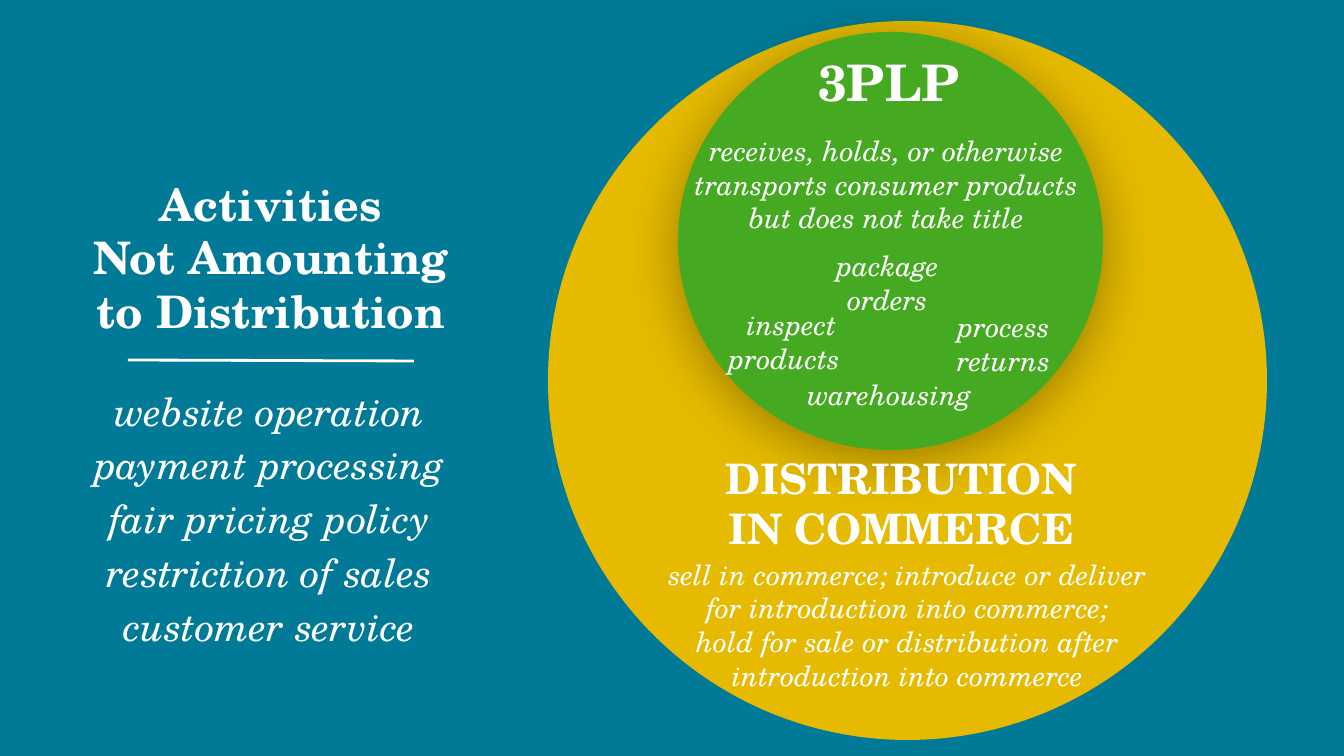
from dataclasses import dataclass

import pptx
import pptx.dml.color
import pptx.enum.shapes
import pptx.enum.text
import pptx.oxml
import pptx.oxml.ns
import pptx.util
from lxml import etree

TEAL = pptx.dml.color.RGBColor(0x00, 0x7A, 0x96)
GOLD = pptx.dml.color.RGBColor(0xE5, 0xBA, 0x00)
GREEN = pptx.dml.color.RGBColor(0x45, 0xAA, 0x21)
WHITE = pptx.dml.color.RGBColor(0xFF, 0xFF, 0xFF)

FONT = "TeX Gyre Schola"
EMU_PER_PX = 914400 / 100.8
TITLE_ONLY = 5
INSET = 3


@dataclass(frozen=True)
class Box:
    left: int
    top: int
    width: int
    height: int


@dataclass(frozen=True)
class Label:
    text: str
    box: Box
    size: int = 20
    heading: bool = False  # headings are bold, descriptions italic
    wrap: bool = True
    gap: float = 0  # points between paragraphs
    last_indent: int = 0  # right indent of the last paragraph


@dataclass(frozen=True)
class Circle:
    box: Box
    colour: pptx.dml.color.RGBColor
    raised: bool = False


CIRCLES = [
    Circle(Box(548, 21, 719, 719), GOLD),
    Circle(Box(678, 32, 425, 418), GREEN, raised=True),
]

TITLE = Label("Activities\nNot Amounting\nto Distribution",
              Box(89, 173, 364, 168), 32, heading=True, wrap=False)

LABELS = [
    # 3PLP
    Label("3PLP", Box(800, 48, 178, 67), 36, heading=True),
    Label("receives, holds, or otherwise transports consumer products "
          "but does not take title", Box(689, 130, 395, 108)),
    Label("package\norders", Box(774, 245, 227, 74)),
    Label("inspect\nproducts", Box(678, 304, 227, 74), last_indent=15),
    Label("process\nreturns", Box(890, 306, 227, 74)),
    Label("warehousing", Box(776, 375, 227, 39)),
    # Distribution in commerce
    Label("DISTRIBUTION IN COMMERCE", Box(708, 449, 387, 108), 30, heading=True),
    Label("sell in commerce; introduce or deliver\n"
          "for introduction into commerce;\n"
          "hold for sale or distribution after introduction into commerce",
          Box(653, 554, 509, 141)),
    # Activities outside distribution
    Label("website operation\npayment processing\nfair pricing policy\n"
          "restriction of sales\ncustomer service",
          Box(79, 381, 381, 274), 28, gap=4.8),
]


def px(length: int) -> pptx.util.Emu:
    return pptx.util.Emu(round(length * EMU_PER_PX))


def edges(box: Box) -> tuple:
    return px(box.left), px(box.top), px(box.width), px(box.height)


def add_soft_shadow(shape) -> None:
    effects = pptx.oxml.parse_xml(
        f'<a:effectLst {pptx.oxml.ns.nsdecls("a")}>'
        f'<a:outerShdw blurRad="{pptx.util.Pt(38)}" dist="{pptx.util.Pt(6.7)}" '
        'dir="5400000" rotWithShape="0"><a:srgbClr val="000000">'
        '<a:alpha val="33000"/></a:srgbClr></a:outerShdw></a:effectLst>')
    properties = shape.element.spPr
    properties.remove(properties.find(pptx.oxml.ns.qn("a:effectLst")))
    properties.append(effects)


def draw_circle(slide, circle: Circle) -> None:
    shape = slide.shapes.add_shape(
        pptx.enum.shapes.MSO_SHAPE.OVAL, *edges(circle.box))
    shape.fill.solid()
    shape.fill.fore_color.rgb = circle.colour
    shape.line.fill.background()
    shape.shadow.inherit = False
    if circle.raised:
        add_soft_shadow(shape)


def write_label(shape, label: Label) -> None:
    shape.left, shape.top, shape.width, shape.height = edges(label.box)
    frame = shape.text_frame
    frame.text = label.text
    frame.word_wrap = label.wrap
    frame.auto_size = pptx.enum.text.MSO_AUTO_SIZE.SHAPE_TO_FIT_TEXT
    frame.vertical_anchor = pptx.enum.text.MSO_ANCHOR.MIDDLE
    frame.margin_left = frame.margin_right = px(INSET)
    frame.margin_top = frame.margin_bottom = px(INSET)
    for index, paragraph in enumerate(frame.paragraphs):
        paragraph.alignment = pptx.enum.text.PP_ALIGN.CENTER
        if index and label.gap:
            paragraph.space_before = pptx.util.Pt(label.gap)
        for run in paragraph.runs:
            run.font.name = FONT
            run.font.size = pptx.util.Pt(label.size)
            run.font.bold = label.heading
            run.font.italic = not label.heading
            run.font.color.rgb = WHITE
    if label.last_indent:
        last_paragraph = shape.element.txBody.p_lst[-1]
        last_paragraph.get_or_add_pPr().set("marR", str(px(label.last_indent)))


def draw_title_rule(slide) -> None:
    rule = slide.shapes.add_connector(
        pptx.enum.shapes.MSO_CONNECTOR.STRAIGHT,
        px(128), px(360), px(414), px(361))
    rule.line.color.rgb = WHITE
    rule.line.width = pptx.util.Pt(2)
    etree.SubElement(rule.element.spPr, pptx.oxml.ns.qn("a:effectLst"))


def main() -> None:
    deck = pptx.Presentation()
    deck.slide_width, deck.slide_height = px(1344), px(756)
    slide = deck.slides.add_slide(deck.slide_layouts[TITLE_ONLY])
    slide.background.fill.solid()
    slide.background.fill.fore_color.rgb = TEAL

    for circle in CIRCLES:
        draw_circle(slide, circle)
    write_label(slide.shapes.title, TITLE)
    for label in LABELS:
        write_label(slide.shapes.add_textbox(*edges(label.box)), label)
    draw_title_rule(slide)
    deck.save("out.pptx")


if __name__ == "__main__":
    main()
